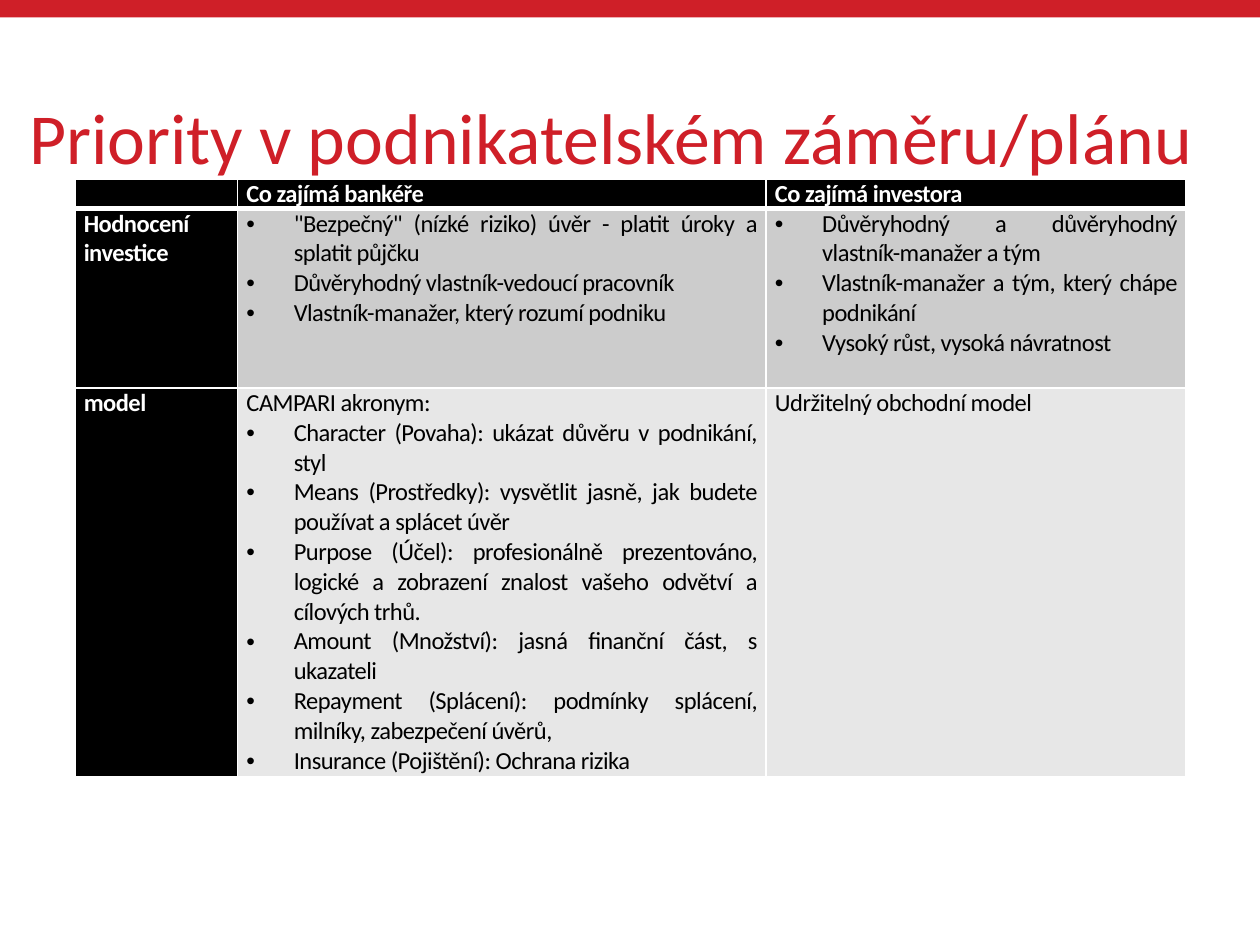
from lxml import etree
from pptx import Presentation
from pptx.dml.color import RGBColor
from pptx.enum.shapes import MSO_SHAPE
from pptx.enum.text import MSO_ANCHOR, MSO_AUTO_SIZE, PP_ALIGN
from pptx.oxml.ns import qn
from pptx.util import Pt

RECTANGLE = MSO_SHAPE.RECTANGLE
MIDDLE = MSO_ANCHOR.MIDDLE
NO_AUTOFIT = MSO_AUTO_SIZE.NONE
LEFT, JUSTIFY = PP_ALIGN.LEFT, PP_ALIGN.JUSTIFY

RED = RGBColor(0xCF, 0x1F, 0x28)
BLACK = RGBColor(0x00, 0x00, 0x00)
WHITE = RGBColor(0xFF, 0xFF, 0xFF)
GREY = RGBColor(0xCC, 0xCC, 0xCC)
LIGHT_GREY = RGBColor(0xE7, 0xE7, 0xE7)

FONT = "Calibri"
TABLE_SIZE = 14
BULLET = "• "
COLUMN_WIDTHS = [93, 302, 240]
ROW_HEIGHTS = [17, 102.5, 222]
ROW_FILLS = [BLACK, GREY, LIGHT_GREY]

# Each cell is a list of paragraphs; a leading bullet marks a list item.
ROWS = [
    [[], ["Co zajímá bankéře"], ["Co zajímá investora"]],
    [
        ["Hodnocení investice"],
        [
            '• "Bezpečný" (nízké riziko) úvěr - platit úroky a splatit půjčku',
            "• Důvěryhodný vlastník-vedoucí pracovník",
            "• Vlastník-manažer, který rozumí podniku",
        ],
        [
            "• Důvěryhodný a důvěryhodný vlastník-manažer a tým",
            "• Vlastník-manažer a tým, který chápe podnikání",
            "• Vysoký růst, vysoká návratnost",
        ],
    ],
    [
        ["model"],
        [
            "CAMPARI akronym:",
            "• Character (Povaha): ukázat důvěru v podnikání, styl",
            "• Means (Prostředky): vysvětlit jasně, jak budete používat a splácet úvěr",
            "• Purpose (Účel): profesionálně prezentováno, logické a zobrazení "
            "znalost vašeho odvětví a cílových trhů.",
            "• Amount (Množství): jasná finanční část, s ukazateli",
            "• Repayment (Splácení): podmínky splácení, milníky, zabezpečení úvěrů,",
            "• Insurance (Pojištění): Ochrana rizika",
        ],
        ["Udržitelný obchodní model"],
    ],
]


def add_top_bar(slide, left, top, width, height):
    bar = slide.shapes.add_shape(RECTANGLE, Pt(left), Pt(top), Pt(width), Pt(height))
    bar.shadow.inherit = False
    bar.fill.solid()
    bar.fill.fore_color.rgb = RED
    bar.line.fill.background()


def add_title(slide, left, top, width, height):
    title = slide.shapes.title
    title.left, title.top = Pt(left), Pt(top)
    title.width, title.height = Pt(width), Pt(height)
    tf = title.text_frame
    tf.word_wrap = True
    tf.auto_size = NO_AUTOFIT
    tf.vertical_anchor = MIDDLE
    p = tf.paragraphs[0]
    p.alignment = LEFT
    p.line_spacing = 0.9
    r = p.add_run()
    r.text = "Priority v podnikatelském záměru/plánu"
    r.font.name = FONT
    r.font.size = Pt(41)
    r.font.color.rgb = RED


def set_borders(cell, bottom_width, top_width):
    tc_pr = cell._tc.get_or_add_tcPr()
    widths = {"a:lnL": 1, "a:lnR": 1, "a:lnT": top_width, "a:lnB": bottom_width}
    for tag, width in widths.items():
        line = etree.SubElement(tc_pr, qn(tag), w=str(Pt(width)))
        fill = etree.SubElement(line, qn("a:solidFill"))
        etree.SubElement(fill, qn("a:srgbClr"), val=str(WHITE))


def add_bullet(p):
    p_pr = p._p.get_or_add_pPr()
    p_pr.set("marL", str(Pt(27)))
    p_pr.set("indent", str(-Pt(27)))
    etree.SubElement(p_pr, qn("a:buFont"), typeface="Arial")
    etree.SubElement(p_pr, qn("a:buChar"), char=BULLET.strip())


def fill_cell(cell, paragraphs, is_heading):
    cell.margin_left = cell.margin_right = Pt(5.15)
    cell.margin_top = cell.margin_bottom = 0
    tf = cell.text_frame
    if not paragraphs:
        etree.SubElement(tf.paragraphs[0]._p, qn("a:endParaRPr"), sz=str(TABLE_SIZE * 100))
    for i, text in enumerate(paragraphs):
        p = tf.add_paragraph() if i else tf.paragraphs[0]
        p.alignment = JUSTIFY
        if text.startswith(BULLET):
            add_bullet(p)
        r = p.add_run()
        r.text = text.removeprefix(BULLET)
        r.font.name = FONT
        r.font.size = Pt(TABLE_SIZE)
        r.font.bold = is_heading
        r.font.color.rgb = WHITE if is_heading else BLACK
        r._r.get_or_add_rPr().set("spc", "-30")


def add_priorities_table(slide, left, top):
    frame = slide.shapes.add_table(
        len(ROWS), len(COLUMN_WIDTHS), Pt(left), Pt(top),
        Pt(sum(COLUMN_WIDTHS)), Pt(sum(ROW_HEIGHTS)))
    table = frame.table
    table.first_col = True
    for column, width in zip(table.columns, COLUMN_WIDTHS):
        column.width = Pt(width)
    for i, row in enumerate(ROWS):
        table.rows[i].height = Pt(ROW_HEIGHTS[i])
        for j, paragraphs in enumerate(row):
            cell = table.cell(i, j)
            is_heading = i == 0 or j == 0
            set_borders(cell, bottom_width=3 if i == 0 else 1,
                        top_width=3 if i == 1 else 1)
            cell.fill.solid()
            cell.fill.fore_color.rgb = BLACK if is_heading else ROW_FILLS[i]
            fill_cell(cell, paragraphs, is_heading)


def main():
    prs = Presentation()
    prs.slide_width, prs.slide_height = Pt(720), Pt(540)
    slide = prs.slides.add_slide(prs.slide_layouts[5])
    add_top_bar(slide, 0, 0, 720, 10)
    add_title(slide, 9.5, 29, 698, 104)
    add_priorities_table(slide, 42.75, 102.25)
    prs.save("out.pptx")


if __name__ == "__main__":
    main()
